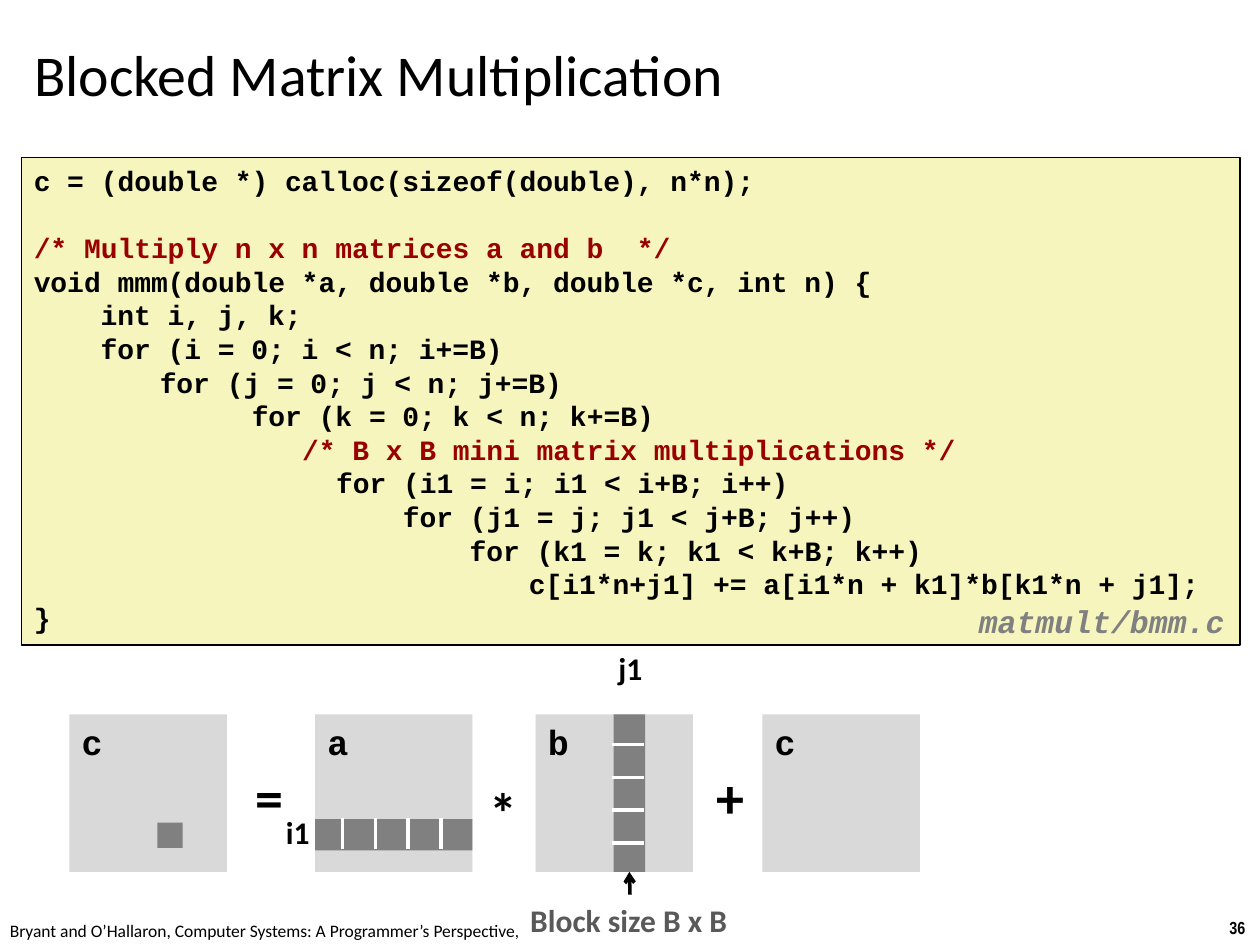
from dataclasses import dataclass

from pptx import Presentation
from pptx.dml.color import RGBColor
from pptx.enum.shapes import MSO_CONNECTOR as Link, MSO_SHAPE as Kind
from pptx.enum.text import MSO_ANCHOR as Anchor, PP_ALIGN as Align
from pptx.oxml.ns import qn
from pptx.util import Inches, Pt
from lxml.etree import SubElement

BLACK = RGBColor(0x00, 0x00, 0x00)
WHITE = RGBColor(0xFF, 0xFF, 0xFF)
CREAM = RGBColor(0xF6, 0xF5, 0xBD)
RED = RGBColor(0x99, 0x00, 0x00)
LIGHT = RGBColor(0xD9, 0xD9, 0xD9)
GRAY = RGBColor(0x80, 0x80, 0x80)
DARK = RGBColor(0x59, 0x59, 0x59)
SANS, MONO = "Calibri", "Courier New"

SIDE = 1.25  # matrix side
BLOCK = 0.25  # block side
TOP = 5.67  # top of the matrix row
STEP = 0.26  # distance between block dividers
LINE = 19.2  # code line height in points


@dataclass
class Code:
    text: str
    indent: float = 0
    color: RGBColor = BLACK
    after: float = 0


@dataclass
class Label:
    text: str
    left: float
    top: float
    width: float
    height: float
    size: float = 18
    font: str = SANS
    color: RGBColor = BLACK
    bold: bool = True
    italic: bool = False


CODE = [
    Code("c = (double *) calloc(sizeof(double), n*n);", after=LINE),
    Code("/* Multiply n x n matrices a and b  */", color=RED),
    Code("void mmm(double *a, double *b, double *c, int n) {"),
    Code("int i, j, k;", 0.53),
    Code("for (i = 0; i < n; i+=B)", 0.53),
    Code("for (j = 0; j < n; j+=B)", 1),
    Code("for (k = 0; k < n; k+=B)", 1.73),
    Code("/* B x B mini matrix multiplications */", 2.13, RED),
    Code("for (i1 = i; i1 < i+B; i++)", 2.4),
    Code("for (j1 = j; j1 < j+B; j++)", 2.93),
    Code("for (k1 = k; k1 < k+B; k++)", 3.46),
    Code("c[i1*n+j1] += a[i1*n + k1]*b[k1*n + j1];", 3.93),
    Code("}"),
]

MATS = [("c", 0.55), ("a", 2.5), ("b", 4.25), ("c", 6.05)]

LABELS = [
    Label("36", 9.66, 7.23, 0.34, 0.27, 10, "Arial Narrow"),
    Label("Bryant and O’Hallaron, Computer Systems: A Programmer’s Perspective,",
          -0.02, 7.25, 4.24, 0.27, 10, bold=False),
    Label("i1", 2.17, 6.4, 0.39, 0.4),
    Label("j1", 4.81, 5.1, 0.39, 0.4),
    Label("=", 1.93, 6, 0.43, 0.64, 32),
    Label("*", 3.79, 6.12, 0.43, 0.64, 32),
    Label("+", 5.59, 6, 0.43, 0.64, 32),
    Label("matmult/bmm.c", 7.67, 4.73, 2.23, 0.39, 18, MONO, GRAY, italic=True),
]


def write(para, text: str, size: float = 18, font: str = SANS,
          color: RGBColor = BLACK, bold: bool = True, italic: bool = False):
    """Add one formatted run to a left-aligned paragraph."""
    para.alignment = Align.LEFT
    run = para.add_run()
    run.text = text
    face = run.font
    face.name, face.size, face.bold, face.italic = font, Pt(size), bold, italic
    face.color.rgb = color


def rect(slide, left: float, top: float, width: float, height: float,
         fill: RGBColor):
    box = slide.shapes.add_shape(Kind.RECTANGLE, Inches(left), Inches(top),
                                 Inches(width), Inches(height))
    box.shadow.inherit = False
    box.fill.solid()
    box.fill.fore_color.rgb = fill
    box.line.fill.background()
    box.text_frame.vertical_anchor = Anchor.TOP
    return box


def stroke(slide, x1: float, y1: float, x2: float, y2: float, color: RGBColor):
    link = slide.shapes.add_connector(Link.STRAIGHT, Inches(x1), Inches(y1),
                                      Inches(x2), Inches(y2))
    link.line.color.rgb = color
    link.line.width = Pt(2)
    SubElement(link._element.spPr, qn("a:effectLst"))
    return link


def label(slide, item: Label):
    box = slide.shapes.add_textbox(Inches(item.left), Inches(item.top),
                                   Inches(item.width), Inches(item.height))
    box.text_frame.word_wrap = False
    write(box.text_frame.paragraphs[0], item.text, size=item.size,
          font=item.font, color=item.color, bold=item.bold, italic=item.italic)


def listing(slide, rows: list[Code]):
    box = rect(slide, 0.17, 1.25, 9.67, 3.87, CREAM)
    box.line.color.rgb = BLACK
    box.line.width = Pt(1)
    frame = box.text_frame
    for i, row in enumerate(rows):
        para = frame.add_paragraph() if i else frame.paragraphs[0]
        para.line_spacing = Pt(LINE)
        para.space_after = Pt(row.after)
        para._p.get_or_add_pPr().set("marL", str(Inches(row.indent)))
        write(para, row.text, size=16, font=MONO, color=row.color)


def main():
    deck = Presentation()
    deck.slide_width, deck.slide_height = Inches(10), Inches(7.5)
    slide = deck.slides.add_slide(deck.slide_layouts[5])

    # Title
    title = slide.shapes.title
    title.left, title.top = Inches(0.17), Inches(-0.11)
    title.width, title.height = Inches(8.62), Inches(1.45)
    title.text_frame.vertical_anchor = Anchor.MIDDLE
    head = title.text_frame.paragraphs[0]
    head.line_spacing = 0.9
    write(head, "Blocked Matrix Multiplication", size=33, bold=False)

    # Code and matrices
    listing(slide, CODE)
    for name, left in MATS:
        mat = rect(slide, left, TOP, SIDE, SIDE, LIGHT)
        write(mat.text_frame.paragraphs[0], name, size=20, font=MONO)

    # Blocks in c, a and b
    rect(slide, 1.25, 6.53, 0.2, 0.2, GRAY)
    rect(slide, 2.5, 6.5, SIDE, BLOCK, GRAY)
    col = rect(slide, 4.87, TOP, BLOCK, SIDE, GRAY)
    for i in range(4):
        x, y = 2.72 + i * STEP, 5.91 + i * STEP
        stroke(slide, x, 6.49, x, 6.49 + BLOCK, WHITE)
        stroke(slide, 4.86, y, 4.86 + BLOCK, y, WHITE)

    # Labels and footer
    for item in LABELS:
        label(slide, item)

    # Block size note with its arrow
    note = rect(slide, 4.11, 7.1, 1.78, 0.4, WHITE)
    note.text_frame.word_wrap = False
    write(note.text_frame.paragraphs[0], "Block size B x B", color=DARK)
    arrow = stroke(slide, 5, 7.1, 5, 6.92, BLACK)
    arrow.begin_connect(note, 0)
    arrow.end_connect(col, 2)
    SubElement(arrow.line._get_or_add_ln(), qn("a:tailEnd"), type="arrow")

    deck.save("out.pptx")


if __name__ == "__main__":
    main()
